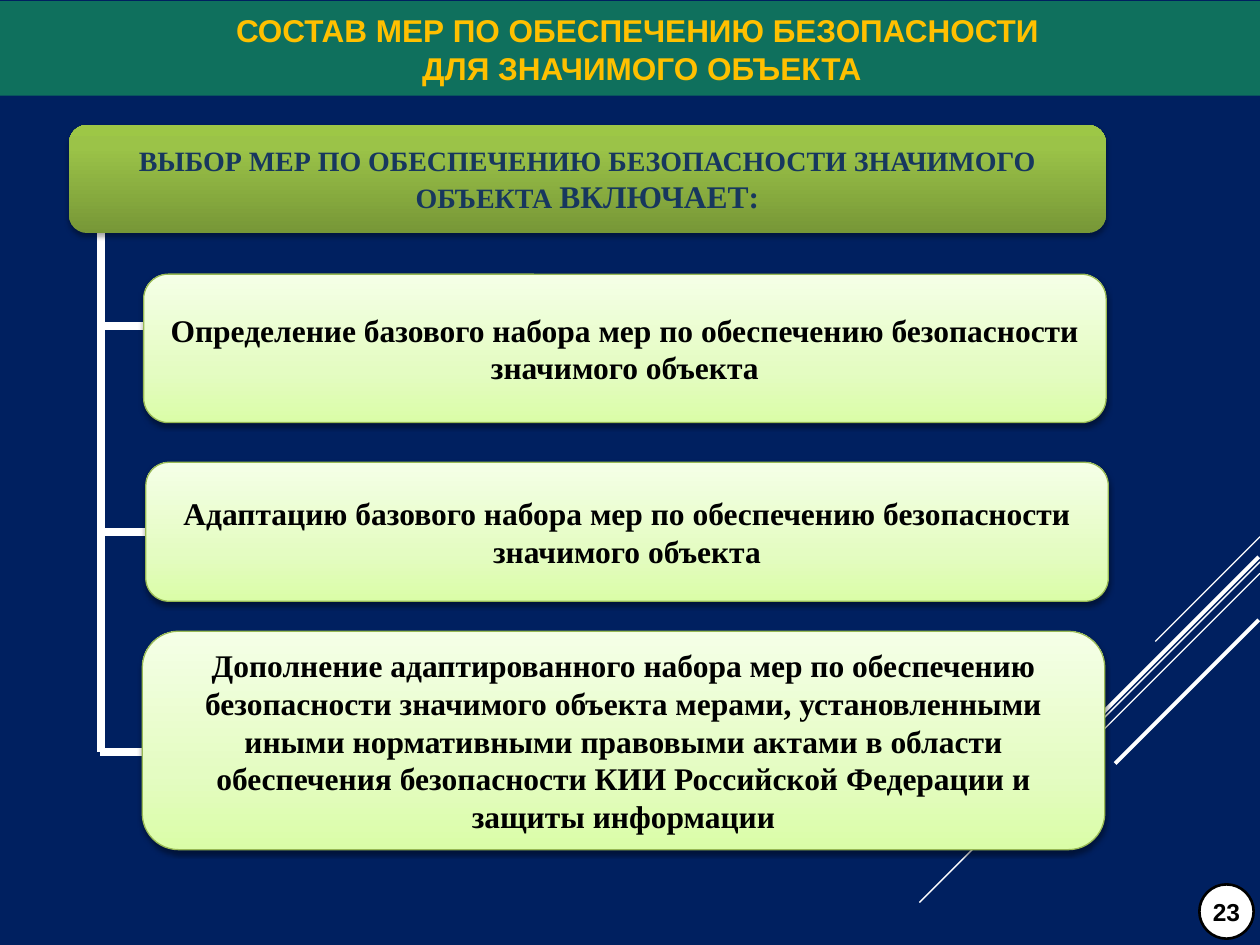
from typing import NamedTuple

from lxml.etree import SubElement
from pptx import Presentation
from pptx.dml.color import RGBColor
from pptx.enum.shapes import MSO_CONNECTOR, MSO_SHAPE as Shape
from pptx.enum.text import MSO_ANCHOR, PP_ALIGN
from pptx.oxml.ns import qn
from pptx.util import Pt

NAVY = RGBColor(0x00, 0x20, 0x60)
TEAL = RGBColor(0x0F, 0x70, 0x5D)
GOLD = RGBColor(0xFF, 0xC0, 0x00)
WHITE = RGBColor(0xFF, 0xFF, 0xFF)
BLACK = RGBColor(0x00, 0x00, 0x00)
HEADING_BLUE = RGBColor(0x17, 0x37, 0x5E)
CARD_EDGE = RGBColor(0x98, 0xB9, 0x55)
# Gradient stops: position in percent and colour, from the bottom up
HEADING_STOPS = ((0, RGBColor(0x77, 0x97, 0x37)), (80, RGBColor(0x9B, 0xC3, 0x48)),
                 (100, RGBColor(0x9D, 0xC7, 0x46)))
CARD_STOPS = ((0, RGBColor(0xDA, 0xFD, 0xA7)), (35, RGBColor(0xE4, 0xFC, 0xC2)),
              (100, RGBColor(0xF5, 0xFF, 0xE7)))
SANS, SERIF = "Arial", "Times New Roman"


class Box(NamedTuple):
    left: float
    top: float
    width: float
    height: float


class Measure(NamedTuple):
    text: str
    box: Box
    branch_left: float
    branch_y: float


class Ray(NamedTuple):
    """A 45-degree line running down and left from its start."""
    x: float
    y: float
    run: float
    weight: float


CARD_WIDTH = 550
TRUNK_X = 57.6
MEASURES = (
    Measure("Определение базового набора мер по обеспечению безопасности значимого объекта",
            Box(82.1, 156.7, CARD_WIDTH, 84.8), TRUNK_X, 186.5),
    Measure("Адаптацию базового набора мер по обеспечению безопасности значимого объекта",
            Box(83.3, 264.2, CARD_WIDTH, 79.4), 59, 303.8),
    Measure("Дополнение адаптированного набора мер по обеспечению безопасности значимого "
            "объекта мерами, установленными иными нормативными правовыми актами в области "
            "обеспечения безопасности КИИ Российской Федерации и защиты информации",
            Box(81.3, 360.7, CARD_WIDTH, 124.8), 56.9, 429.8),
)
RAYS = (Ray(720, 306.7, 59.8, 0.75), Ray(720, 321.1, 194.6, 0.75),
        Ray(720, 327.6, 123.8, 0.75), Ray(719.3, 318.2, 113, 2.25),
        Ray(719.3, 354.2, 82.1, 2.25))


def add_line(slide, x1: float, y1: float, x2: float, y2: float, weight: float):
    line = slide.shapes.add_connector(MSO_CONNECTOR.STRAIGHT, Pt(x1), Pt(y1), Pt(x2), Pt(y2))
    line.line.color.rgb = WHITE
    line.line.width = Pt(weight)
    SubElement(line._element.spPr, qn("a:effectLst"))


def add_block(slide, kind: Shape, box: Box, fill=None, edge=None, weight: float = 0.75):
    block = slide.shapes.add_shape(kind, *map(Pt, box))
    block.shadow.inherit = False
    if fill is not None:
        block.fill.solid()
        block.fill.fore_color.rgb = fill
    if edge is None:
        block.line.fill.background()
    else:
        block.line.color.rgb = edge
        block.line.width = Pt(weight)
    return block


def add_color(parent, color: RGBColor):
    return SubElement(parent, qn("a:srgbClr"), val=str(color))


def add_panel(slide, box: Box, stops, edge=None, shade: int = 38, drop: float = 1.6):
    """Rounded panel with a vertical gradient and a soft shadow below."""
    panel = add_block(slide, Shape.ROUNDED_RECTANGLE, box, edge=edge)
    panel.fill.gradient()
    panel.fill.gradient_angle = 90
    stop_list = panel._element.spPr.find(qn("a:gradFill")).find(qn("a:gsLst"))
    for old_stop in list(stop_list):
        stop_list.remove(old_stop)
    for position, color in stops:
        add_color(SubElement(stop_list, qn("a:gs"), pos=str(position * 1000)), color)
    effects = panel._element.spPr.find(qn("a:effectLst"))
    shadow = SubElement(effects, qn("a:outerShdw"), blurRad=str(Pt(3.1)), dist=str(Pt(drop)),
                        dir="5400000", rotWithShape="0")
    SubElement(add_color(shadow, BLACK), qn("a:alpha"), val=str(shade * 1000))
    return panel


def write(shape, *parts: tuple[str, float], font: str, color: RGBColor,
          wrap: bool = True, margins=(7.2, 3.6, 7.2, 3.6)):
    """Centred bold text from (text, size) parts; a newline breaks the line."""
    frame = shape.text_frame
    frame.word_wrap = wrap
    frame.vertical_anchor = MSO_ANCHOR.MIDDLE
    (frame.margin_left, frame.margin_top,
     frame.margin_right, frame.margin_bottom) = map(Pt, margins)
    paragraph = frame.paragraphs[0]
    paragraph.alignment = PP_ALIGN.CENTER
    for text, size in parts:
        for index, line in enumerate(text.split("\n")):
            if index:
                paragraph.add_line_break()
            run = paragraph.add_run()
            run.text = line
            run.font.name = font
            run.font.size = Pt(size)
            run.font.bold = True
            run.font.color.rgb = color


def main():
    deck = Presentation()
    deck.slide_width, deck.slide_height = Pt(720), Pt(540)
    slide = deck.slides.add_slide(deck.slide_layouts[6])
    slide.background.fill.solid()
    slide.background.fill.fore_color.rgb = NAVY

    # Diagonal decoration
    for ray in RAYS:
        add_line(slide, ray.x, ray.y, ray.x - ray.run, ray.y + ray.run, ray.weight)

    # Title band and page number
    title = add_block(slide, Shape.RECTANGLE, Box(0, 0.7, 720, 54), TEAL)
    write(title, ("СОСТАВ МЕР ПО ОБЕСПЕЧЕНИЮ БЕЗОПАСНОСТИ \nДЛЯ ЗНАЧИМОГО ОБЪЕКТА", 18),
          font=SANS, color=GOLD, margins=(17.3, 3.6, 3.6, 3.6))
    page = add_block(slide, Shape.STAR_16_POINT, Box(685.4, 505.4, 31, 31), WHITE, BLACK, 1.5)
    page.adjustments[0] = 0.5
    write(page, ("23", 14), font=SANS, color=BLACK, wrap=False)

    # Tree: trunk, heading, then a branch and a card for each measure
    add_line(slide, TRUNK_X, 133.2, TRUNK_X, MEASURES[-1].branch_y, 4.5)
    heading = add_panel(slide, Box(39.5, 71.4, 592.5, 61.8), HEADING_STOPS, shade=35, drop=1.8)
    write(heading, ("ВЫБОР МЕР ПО ОБЕСПЕЧЕНИЮ БЕЗОПАСНОСТИ ЗНАЧИМОГО ОБЪЕКТА ", 16),
          ("ВКЛЮЧАЕТ:", 18), font=SERIF, color=HEADING_BLUE)
    for measure in MEASURES:
        add_line(slide, measure.branch_left, measure.branch_y,
                 measure.box.left + 1, measure.branch_y, 4.5)
        card = add_panel(slide, measure.box, CARD_STOPS, edge=CARD_EDGE)
        write(card, (measure.text, 18), font=SERIF, color=BLACK)

    deck.save("out.pptx")


if __name__ == "__main__":
    main()
